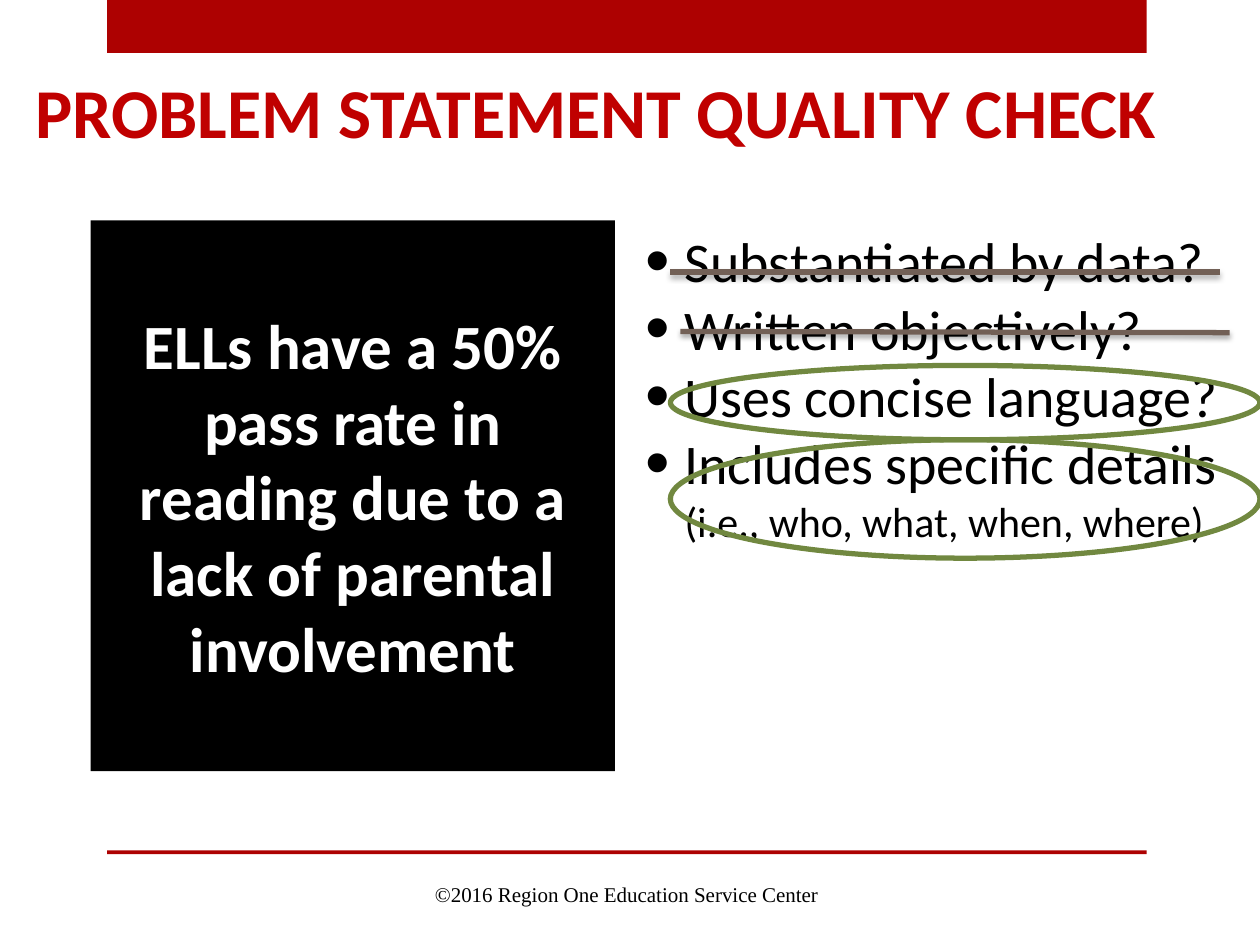
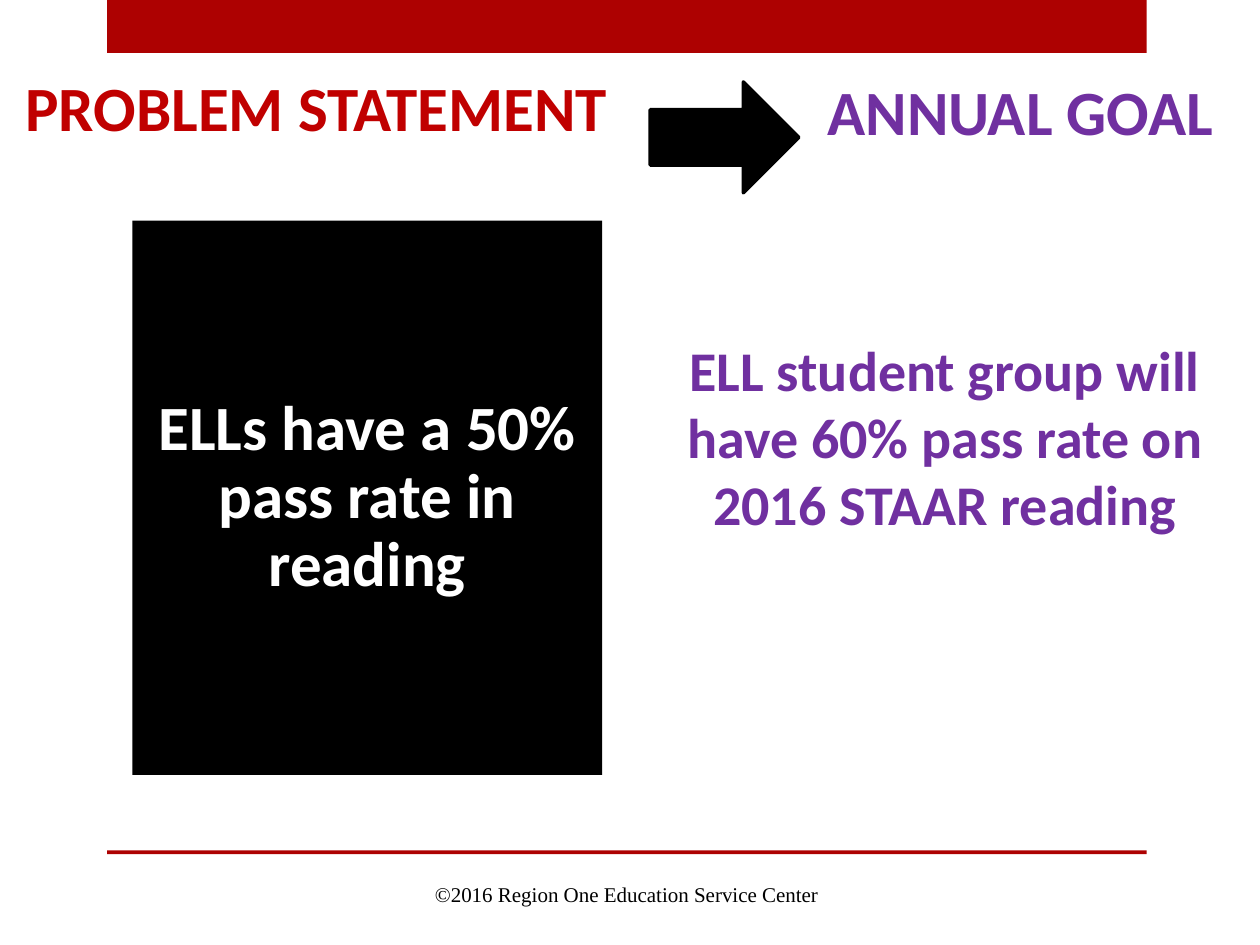
from dataclasses import dataclass

from lxml.etree import SubElement
from pptx import Presentation
from pptx.dml.color import RGBColor
from pptx.enum.shapes import MSO_CONNECTOR, MSO_SHAPE
from pptx.enum.text import MSO_ANCHOR, MSO_AUTO_SIZE, PP_ALIGN
from pptx.oxml.ns import qn
from pptx.util import Pt


@dataclass(frozen=True)
class Theme:
    """Colours, fonts and type sizes of the deck."""
    band: str = "AD0101"
    title: str = "C00000"
    goal: str = "7030A0"
    ink: str = "000000"
    paper: str = "FFFFFF"
    strike: str = "726056"
    ring: str = "718840"
    sans: str = "Calibri"
    serif: str = "Times New Roman"
    large: int = 40
    head: int = 36
    text: int = 32
    small: int = 24
    note: int = 12


def add(node, tag, **attrs):
    """Append a drawing element with the given attributes."""
    return SubElement(node, qn(f"a:{tag}"), {k: str(v) for k, v in attrs.items()})


class Deck:
    """Holds the style and the current slide."""

    def __init__(self, theme):
        self.theme = theme
        self.show = Presentation()
        self.show.slide_width, self.show.slide_height = Pt(720), Pt(540)

    def start(self):
        """Open a slide with its band and rule."""
        self.slide = self.show.slides.add_slide(self.show.slide_layouts[1])
        for top, height in ((0, 30.24), (486, 2.16)):
            self.shape(MSO_SHAPE.RECTANGLE, (61.2, top, 594, height), self.theme.band)

    def shape(self, kind, place, fill=None, line=None, width=3):
        """Draw a preset shape."""
        item = self.slide.shapes.add_shape(kind, *map(Pt, place))
        item.shadow.inherit = False
        self.paint(item, fill)
        if line:
            item.line.color.rgb = RGBColor.from_string(line)
            item.line.width = Pt(width)
        else:
            item.line.fill.background()
        return item

    def paint(self, item, fill):
        """Fill an item, or leave it clear."""
        if fill:
            item.fill.solid()
            item.fill.fore_color.rgb = RGBColor.from_string(fill)
        else:
            item.fill.background()

    def move(self, item, place):
        """Move a placeholder."""
        item.left, item.top, item.width, item.height = map(Pt, place)
        return item

    def style(self, run, size, color, bold, font):
        """Format one run."""
        run.font.name, run.font.size, run.font.bold = font, Pt(size), bold
        run.font.color.rgb = RGBColor.from_string(color)

    def words(self, item, lines, size, color, bold=True, font=None,
              align=PP_ALIGN.CENTER, anchor=MSO_ANCHOR.TOP, inset=(7.2, 3.6),
              bullet=False, space=1.0):
        """Put formatted paragraphs into an item."""
        frame = item.text_frame
        frame.text = "\n".join(lines)
        frame.word_wrap, frame.auto_size = True, MSO_AUTO_SIZE.NONE
        frame.vertical_anchor = anchor
        frame.margin_left = frame.margin_right = Pt(inset[0])
        frame.margin_top = frame.margin_bottom = Pt(inset[1])
        for para in frame.paragraphs:
            self.mark(para, bullet)
            para.alignment, para.line_spacing = align, space
            para.space_before = para.space_after = Pt(0)
            for run in para.runs:
                self.style(run, size, color, bold, font or self.theme.sans)
        return frame

    def mark(self, para, bullet):
        """Set or clear the bullet and its indent."""
        props = para._p.get_or_add_pPr()
        hang = int(Pt(22.5)) if bullet else 0
        props.set("marL", str(hang))
        props.set("indent", str(-hang))
        if bullet:
            add(add(props, "buClr"), "srgbClr", val=self.theme.ink)
            add(props, "buSzPct", val=125000)
            add(props, "buFont", typeface="Arial")
            add(props, "buChar", char="•")
        else:
            add(props, "buNone")

    def title(self, text, place, size, align):
        """Fill the title placeholder."""
        item = self.move(self.slide.shapes.title, place)
        self.words(item, [text], size, self.theme.title, align=align)

    def body(self, place):
        """Return the body placeholder, moved."""
        return self.move(self.slide.placeholders[1], place)

    def panel(self, item, text, space=1.0):
        """Turn an item into a black statement panel."""
        self.paint(item, self.theme.ink)
        self.words(item, [text], self.theme.head, self.theme.paper,
                   anchor=MSO_ANCHOR.MIDDLE, inset=(5, 3), space=space)

    def label(self, text, place, size, color, **look):
        """Add a text box."""
        item = self.slide.shapes.add_textbox(*map(Pt, place))
        self.words(item, [text], size, color, **look)

    def strike(self, left, top, right, end):
        """Draw a shadowed line through a list entry."""
        line = self.slide.shapes.add_connector(
            MSO_CONNECTOR.STRAIGHT, *map(Pt, (left, top, right, end)))
        line.line.color.rgb = RGBColor.from_string(self.theme.strike)
        line.line.width = Pt(3)
        shade = add(add(line._element.spPr, "effectLst"), "outerShdw",
                    blurRad=int(Pt(3.1)), dist=int(Pt(1.8)), dir=5400000,
                    rotWithShape=0)
        add(add(shade, "srgbClr", val=self.theme.ink), "alpha", val=35000)

    def foot(self):
        """Add the copyright line."""
        self.label("©2016 Region One Education Service Center",
                   (62.64, 496.8, 591.12, 28.8), self.theme.note, self.theme.ink,
                   bold=False, font=self.theme.serif, anchor=MSO_ANCHOR.MIDDLE)


def check(deck):
    """Build the quality check slide."""
    theme = deck.theme
    deck.start()
    frame = deck.words(
        deck.body((361.44, 126, 358.56, 255.6)),
        ["Substantiated by data?", "Written objectively?",
         "Uses concise language?", "Includes specific details "],
        theme.text, theme.ink, bold=False, align=PP_ALIGN.LEFT, bullet=True)
    run = frame.paragraphs[-1].add_run()
    run.text = "(i.e., who, what, when, where)"
    deck.style(run, theme.small, theme.ink, False, theme.sans)
    deck.strike(383.04, 155.5, 696.96, 155.5)
    deck.strike(388.8, 189.4, 702.72, 190.1)
    for top, height in ((208.8, 42.48), (251.28, 67.68)):
        deck.shape(MSO_SHAPE.OVAL, (383.04, top, 336.96, height), line=theme.ring)
    deck.title("PROBLEM STATEMENT QUALITY CHECK", (12.96, 35.28, 685.44, 86.4),
               theme.large, PP_ALIGN.LEFT)
    deck.panel(deck.shape(MSO_SHAPE.RECTANGLE, (51.84, 126, 299.52, 314.64)),
               "ELLs have a 50% pass rate in reading due to a lack of "
               "parental involvement")
    deck.foot()


def goal(deck):
    """Build the annual goal slide."""
    theme = deck.theme
    deck.start()
    arrow = deck.shape(MSO_SHAPE.DOWN_ARROW, (382.32, 36, 63.36, 84.96),
                       theme.ink, theme.ink, 2)
    arrow.rotation = 270
    add(arrow._element.spPr.find(qn("a:ln")), "round")
    deck.title("PROBLEM STATEMENT", (0, 35.28, 361.44, 86.4),
               theme.head, PP_ALIGN.CENTER)
    deck.label("ANNUAL GOAL", (463.68, 38.16, 239.04, 67.68), theme.head, theme.goal)
    deck.panel(deck.body((75.6, 126, 268.56, 316.8)),
               "ELLs have a 50% pass rate in reading", 0.9)
    deck.label("ELL student group will have 60% pass rate on 2016 STAAR reading",
               (361.44, 187.92, 357.12, 164.88), theme.text, theme.goal)
    deck.foot()


def main():
    """Build and save the deck."""
    deck = Deck(Theme())
    check(deck)
    goal(deck)
    deck.show.save("out.pptx")


if __name__ == "__main__":
    main()
